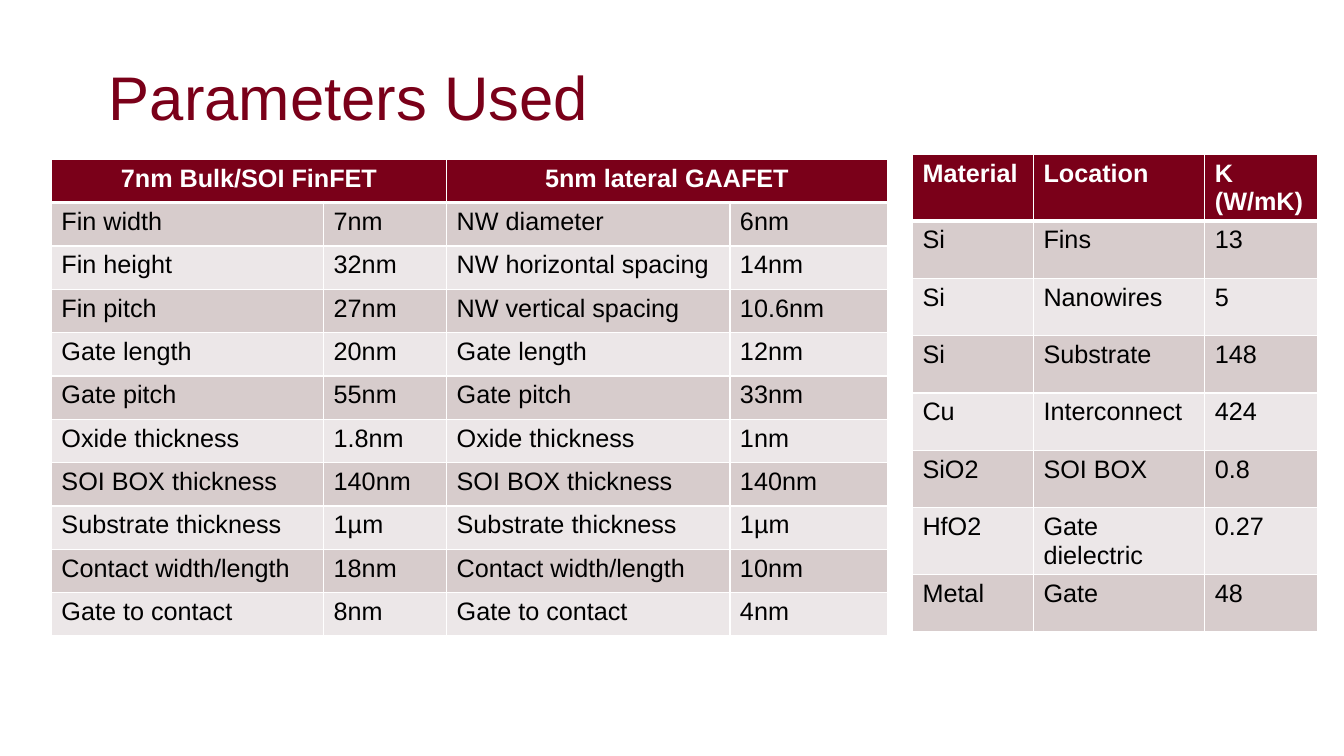
from lxml import etree
from pptx import Presentation
from pptx.dml.color import RGBColor
from pptx.enum.text import MSO_ANCHOR, PP_ALIGN
from pptx.oxml.ns import qn
from pptx.util import Inches, Pt

LEFT, CENTER = PP_ALIGN.LEFT, PP_ALIGN.CENTER
MIDDLE = MSO_ANCHOR.MIDDLE
TITLE_ONLY = 5

FONT = "Arial"
MAROON, WHITE, BLACK = "7A0019", "FFFFFF", "000000"
BANDS = ("D7CCCC", "ECE7E8")

TRANSISTOR_ROWS = [
    ("7nm Bulk/SOI FinFET", "", "5nm lateral GAAFET", ""),
    ("Fin width", "7nm", "NW diameter", "6nm"),
    ("Fin height", "32nm", "NW horizontal spacing", "14nm"),
    ("Fin pitch", "27nm", "NW vertical spacing", "10.6nm"),
    ("Gate length", "20nm", "Gate length", "12nm"),
    ("Gate pitch", "55nm", "Gate pitch", "33nm"),
    ("Oxide thickness", "1.8nm", "Oxide thickness", "1nm"),
    ("SOI BOX thickness", "140nm", "SOI BOX thickness", "140nm"),
    ("Substrate thickness", "1µm", "Substrate thickness", "1µm"),
    ("Contact width/length", "18nm", "Contact width/length", "10nm"),
    ("Gate to contact", "8nm", "Gate to contact", "4nm"),
]
MATERIAL_ROWS = [
    ("Material", "Location", "K (W/mK)"),
    ("Si", "Fins", "13"),
    ("Si", "Nanowires", "5"),
    ("Si", "Substrate", "148"),
    ("Cu", "Interconnect", "424"),
    ("SiO2", "SOI BOX", "0.8"),
    ("HfO2", "Gate dielectric", "0.27"),
    ("Metal", "Gate", "48"),
]


def color(value):
    return RGBColor.from_string(value)


def write(frame, text, size=18, fill=BLACK, bold=False, align=LEFT):
    """Put one formatted paragraph in a text frame."""
    para = frame.paragraphs[0]
    para.alignment = align
    span = para.add_run()
    span.text = text
    span.font.name = FONT
    span.font.size = Pt(size)
    span.font.bold = bold
    span.font.color.rgb = color(fill)


def set_borders(cell, top, bottom):
    """Draw white cell borders; widths are in points."""
    properties = cell._tc.get_or_add_tcPr()
    for side, width in (("L", 1), ("R", 1), ("T", top), ("B", bottom)):
        line = etree.SubElement(properties, qn(f"a:ln{side}"), w=str(Pt(width)))
        fill = etree.SubElement(line, qn("a:solidFill"))
        etree.SubElement(fill, qn("a:srgbClr"), val=WHITE)


def add_title(slide, text):
    title = slide.shapes.title
    title.left, title.top = Inches(1), Inches(0.33)
    title.width, title.height = Inches(11.33), Inches(1.25)
    frame = title.text_frame
    frame.vertical_anchor = MIDDLE
    frame.margin_left = frame.margin_right = Inches(0.08)
    frame.margin_top = frame.margin_bottom = Inches(0.04)
    write(frame, text, size=44, fill=MAROON)


def add_banded_table(slide, rows, left, top, widths, row_height, header_align=LEFT):
    """Add a table with a maroon header and alternating body rows."""
    table = slide.shapes.add_table(
        len(rows), len(widths), Inches(left), Inches(top),
        Inches(sum(widths)), Inches(row_height * len(rows))).table
    for column, width in zip(table.columns, widths):
        column.width = Inches(width)
    for r, values in enumerate(rows):
        table.rows[r].height = Inches(row_height)
        header = r == 0
        for c, text in enumerate(values):
            cell = table.cell(r, c)
            set_borders(cell, top=3 if r == 1 else 1, bottom=3 if header else 1)
            cell.fill.solid()
            cell.fill.fore_color.rgb = color(MAROON if header else BANDS[(r - 1) % 2])
            if text:
                write(cell.text_frame, text, bold=header,
                      fill=WHITE if header else BLACK,
                      align=header_align if header else LEFT)
    return table


def main():
    deck = Presentation()
    deck.slide_width, deck.slide_height = Inches(13.33), Inches(7.5)
    slide = deck.slides.add_slide(deck.slide_layouts[TITLE_ONLY])
    add_title(slide, "Parameters Used")

    # Transistor dimensions, each header over two columns
    transistors = add_banded_table(
        slide, TRANSISTOR_ROWS, 0.51, 1.58, (2.7, 1.22, 2.81, 1.56), 0.43,
        header_align=CENTER)
    for c in (0, 2):
        transistors.cell(0, c).merge(transistors.cell(0, c + 1))

    # Thermal conductivity of the materials
    add_banded_table(slide, MATERIAL_ROWS, 9.05, 1.53, (1.2, 1.7, 1.12), 0.57)

    deck.save("out.pptx")


if __name__ == "__main__":
    main()
